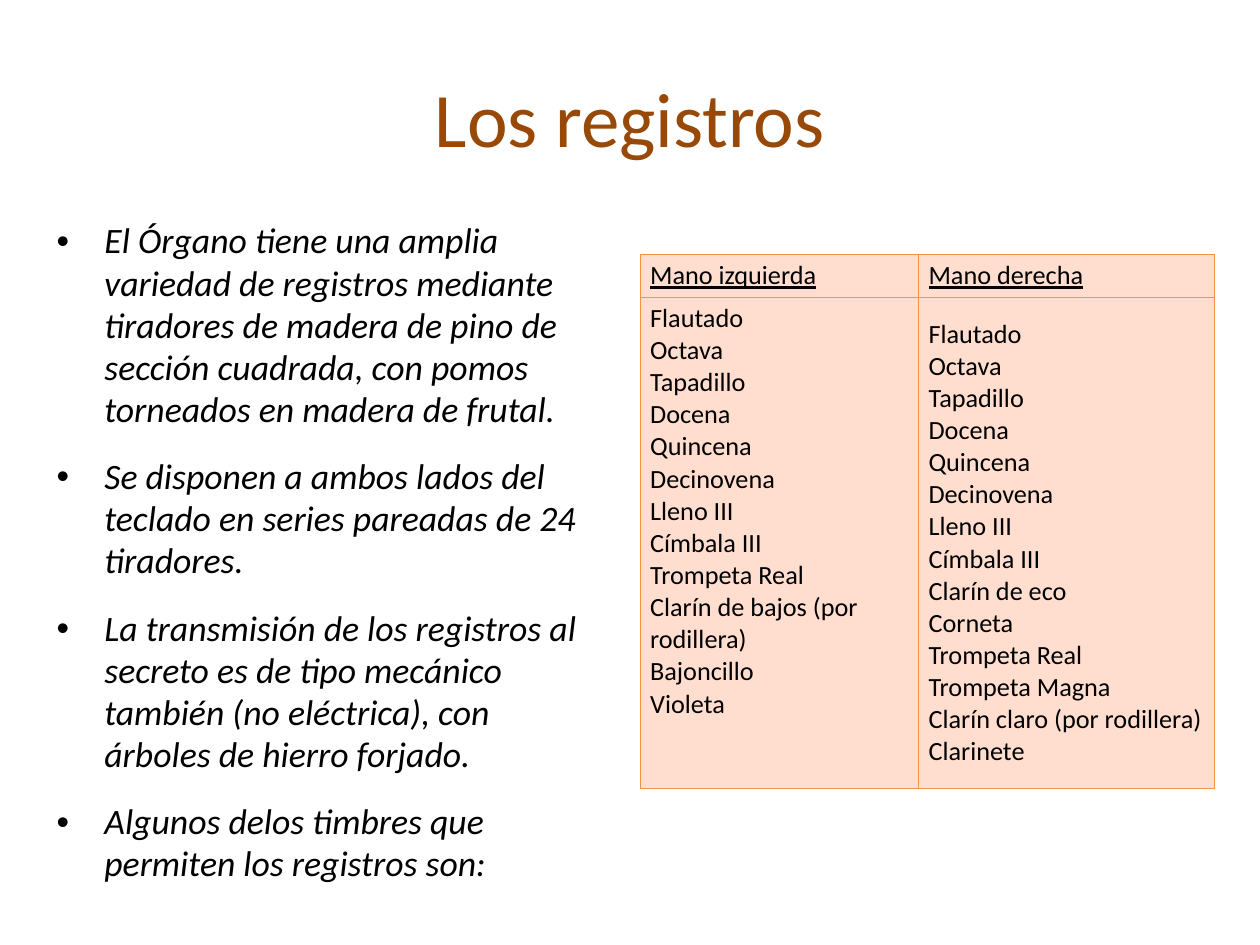
from lxml.etree import SubElement
from pptx import Presentation
from pptx.dml.color import RGBColor
from pptx.enum.text import MSO_ANCHOR, PP_ALIGN
from pptx.oxml.ns import qn
from pptx.util import Inches, Pt

TITLE = "Los registros"
POINTS = [
    "El Órgano tiene una amplia variedad de registros mediante tiradores de "
    "madera de pino de sección cuadrada, con pomos torneados en madera de frutal.",
    "Se disponen a ambos lados del teclado en series pareadas de 24 tiradores.",
    "La transmisión de los registros al secreto es de tipo mecánico también "
    "(no eléctrica), con árboles de hierro forjado.",
    "Algunos delos timbres que permiten los registros son:",
]
STOPS = {
    "Mano izquierda": [
        "Flautado", "Octava", "Tapadillo", "Docena", "Quincena", "Decinovena",
        "Lleno III", "Címbala III", "Trompeta Real",
        "Clarín de bajos (por rodillera)", "Bajoncillo", "Violeta"],
    "Mano derecha": [
        "Flautado", "Octava", "Tapadillo", "Docena", "Quincena", "Decinovena",
        "Lleno III", "Címbala III", "Clarín de eco", "Corneta", "Trompeta Real",
        "Trompeta Magna", "Clarín claro (por rodillera)", "Clarinete"],
}
BROWN, BLACK, PEACH, ORANGE = "984807", "000000", "FFDDCF", "F69240"
WIDTHS, HEIGHTS = (2.21, 2.35), (0.34, 3.9)
INDENT = Inches(0.38)


def style(para, size, color=BLACK, **more):
    look = {"name": "Calibri", "size": Pt(size), **more}
    for font in [para.font] + [run.font for run in para.runs]:
        for key, value in look.items():
            setattr(font, key, value)
        font.color.rgb = RGBColor.from_string(color)


def text_box(slide, *box):
    frame = slide.shapes.add_textbox(*map(Inches, box)).text_frame
    frame.word_wrap = True
    return frame


def bullet(para):
    props = para._p.get_or_add_pPr()
    props.set("marL", str(INDENT))
    props.set("indent", str(-INDENT))
    SubElement(props, qn("a:buFont")).set("typeface", "Arial")
    SubElement(props, qn("a:buChar")).set("char", "•")


def border(cell):
    props = cell._tc.get_or_add_tcPr()
    for side in ("lnL", "lnR", "lnT", "lnB"):
        line = SubElement(props, qn(f"a:{side}"), w=str(Pt(0.75)))
        fill = SubElement(line, qn("a:solidFill"))
        SubElement(fill, qn("a:srgbClr"), val=ORANGE)


def fill_cell(cell, text, anchor, underline):
    border(cell)
    cell.fill.solid()
    cell.fill.fore_color.rgb = RGBColor.from_string(PEACH)
    cell.vertical_anchor = anchor
    cell.margin_left = cell.margin_right = Inches(0.08)
    cell.margin_top = cell.margin_bottom = Inches(0.04)
    para = cell.text_frame.paragraphs[0]
    para.text = text
    style(para, 15, underline=underline, bold=False)


def main():
    deck = Presentation()
    deck.slide_width, deck.slide_height = Inches(10), Inches(7.5)
    slide = deck.slides.add_slide(deck.slide_layouts[6])

    head = text_box(slide, 0.5, 0.3, 9, 1.25)
    head.vertical_anchor = MSO_ANCHOR.MIDDLE
    para = head.paragraphs[0]
    para.text, para.alignment = TITLE, PP_ALIGN.CENTER
    style(para, 44, BROWN)

    body = text_box(slide, 0.35, 1.7, 4.42, 4.95)
    for i, point in enumerate(POINTS):
        para = body.add_paragraph() if i else body.paragraphs[0]
        para.text = point
        para.line_spacing = 0.98
        if i:
            para.space_before = Pt(14.6)
        bullet(para)
        style(para, 20.4, italic=True)

    table = slide.shapes.add_table(
        len(HEIGHTS), len(WIDTHS), Inches(5.08), Inches(2.02),
        Inches(sum(WIDTHS)), Inches(sum(HEIGHTS))).table
    table.first_row = table.horz_banding = False
    for row, height in zip(table.rows, HEIGHTS):
        row.height = Inches(height)
    anchors = (MSO_ANCHOR.TOP, MSO_ANCHOR.MIDDLE)
    for i, (hand, names) in enumerate(STOPS.items()):
        table.columns[i].width = Inches(WIDTHS[i])
        fill_cell(table.cell(0, i), hand, MSO_ANCHOR.MIDDLE, True)
        fill_cell(table.cell(1, i), "\v".join(names), anchors[i], False)

    deck.save("out.pptx")


if __name__ == "__main__":
    main()
